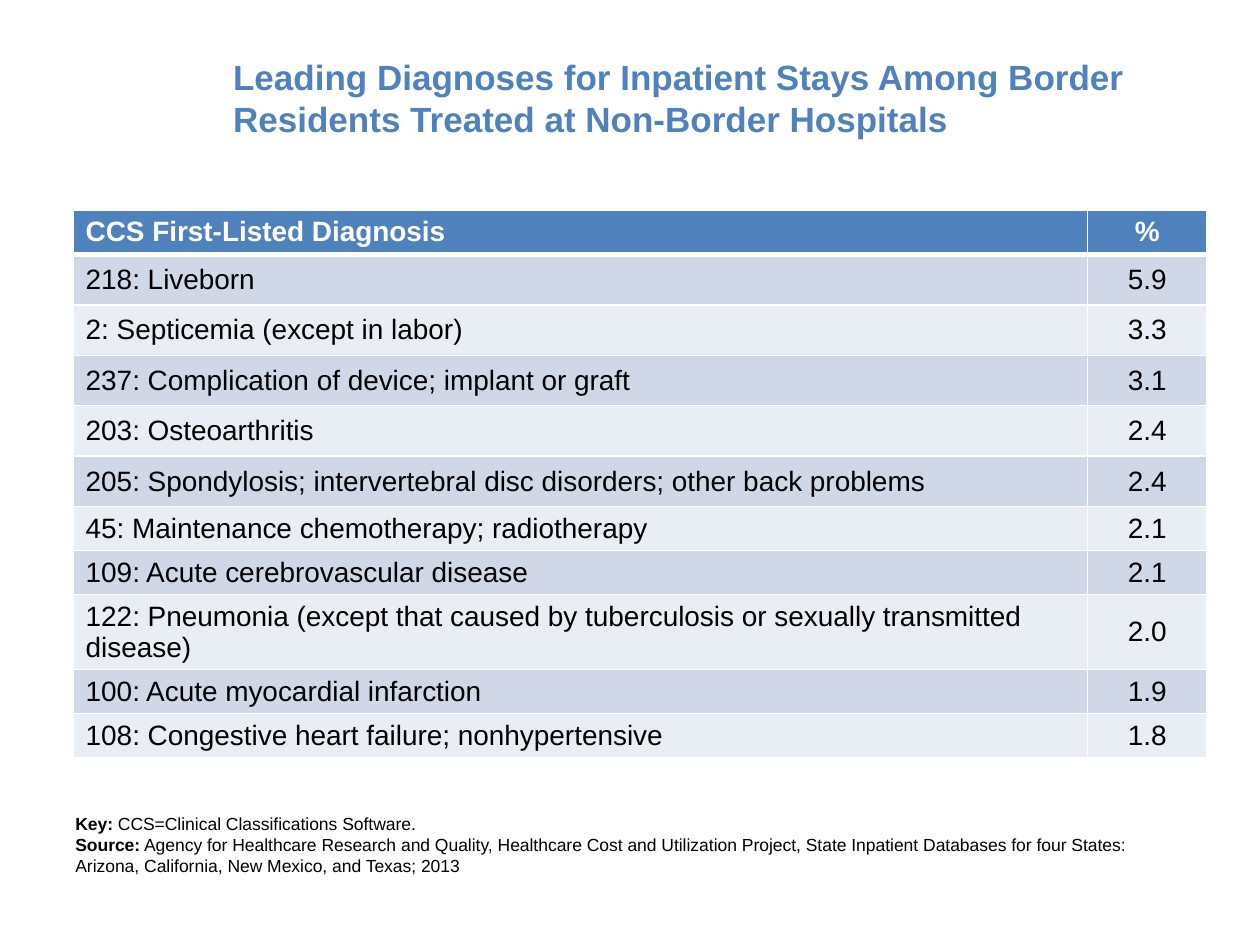
import pptx
import pptx.util
import pptx.dml.color
import pptx.enum.text
import pptx.oxml
import pptx.oxml.ns
from dataclasses import dataclass

Inches = pptx.util.Inches
RGB = pptx.dml.color.RGBColor.from_string
ALIGN = pptx.enum.text.PP_ALIGN
ANCHOR = pptx.enum.text.MSO_ANCHOR


@dataclass
class Theme:
    font: str = "Arial"
    accent: str = "4F81BD"
    white: str = "FFFFFF"
    black: str = "000000"
    bands: tuple = ("D0D8E8", "E9EDF4")
    title: int = 20
    body: int = 16
    note: int = 10


theme = Theme()


def add_run(p, text, size, color, bold=False):
    r = p.add_run()
    r.text = text
    r.font.name = theme.font
    r.font.size = pptx.util.Pt(size)
    r.font.bold = bold
    r.font.color.rgb = RGB(color)


def add_borders(cell, widths):
    tcPr = cell._tc.get_or_add_tcPr()
    for side, width in widths.items():
        tcPr.append(pptx.oxml.parse_xml(
            f'<a:ln{side} {pptx.oxml.ns.nsdecls("a")} w="{pptx.util.Pt(width)}">'
            f'<a:solidFill><a:srgbClr val="{theme.white}"/></a:solidFill></a:ln{side}>'))


prs = pptx.Presentation()
prs.slide_width, prs.slide_height = Inches(10), Inches(7.5)
s = prs.slides.add_slide(prs.slide_layouts[5])

title = s.shapes.title
title.left, title.top = Inches(1.75), Inches(0.3)
title.width, title.height = Inches(7.75), Inches(0.95)
tf = title.text_frame
tf.word_wrap = True
tf.vertical_anchor = ANCHOR.MIDDLE
p = tf.paragraphs[0]
p.alignment = ALIGN.LEFT
add_run(p, "Leading Diagnoses for Inpatient Stays Among Border Residents Treated at Non-Border Hospitals",
        theme.title, theme.accent, True)

rows = [
    ("CCS First-Listed Diagnosis", "%", 0.35),
    ("218: Liveborn", "5.9", 0.4),
    ("2: Septicemia (except in labor)", "3.3", 0.4),
    ("237: Complication of device; implant or graft", "3.1", 0.4),
    ("203: Osteoarthritis", "2.4", 0.4),
    ("205: Spondylosis; intervertebral disc disorders; other back problems", "2.4", 0.4),
    ("45: Maintenance chemotherapy; radiotherapy", "2.1", 0.35),
    ("109: Acute cerebrovascular disease", "2.1", 0.35),
    ("122: Pneumonia (except that caused by tuberculosis or sexually transmitted disease)", "2.0", 0.59),
    ("100: Acute myocardial infarction", "1.9", 0.35),
    ("108: Congestive heart failure; nonhypertensive", "1.8", 0.35),
]
total = sum(height for _, _, height in rows)
table = s.shapes.add_table(len(rows), 2, Inches(0.58), Inches(1.67), Inches(9), Inches(total)).table
table.columns[0].width, table.columns[1].width = Inches(8.05), Inches(0.95)

for i, (diagnosis, percent, height) in enumerate(rows):
    table.rows[i].height = Inches(height)
    header = i == 0
    for j, text in enumerate((diagnosis, percent)):
        cell = table.cell(i, j)
        add_borders(cell, {"L": 1, "R": 1, "T": 3 if i == 1 else 1, "B": 3 if header else 1})
        cell.fill.solid()
        cell.fill.fore_color.rgb = RGB(theme.accent if header else theme.bands[(i - 1) % 2])
        cell.vertical_anchor = ANCHOR.TOP if header else ANCHOR.MIDDLE
        if j == 1 and not header:
            cell.margin_left = cell.margin_right = cell.margin_top = cell.margin_bottom = 0
        p = cell.text_frame.paragraphs[0]
        p.alignment = ALIGN.CENTER if j == 1 else ALIGN.LEFT
        add_run(p, text, theme.body, theme.white if header else theme.black, header)

notes = [
    ("Key: ", "CCS=Clinical Classifications Software."),
    ("Source:", " Agency for Healthcare Research and Quality, Healthcare Cost and Utilization Project, "
     "State Inpatient Databases for four States: Arizona, California, New Mexico, and Texas; 2013"),
]
tf = s.shapes.add_textbox(Inches(0.5), Inches(6.4), Inches(9), Inches(0.62)).text_frame
tf.word_wrap = True
tf.auto_size = pptx.enum.text.MSO_AUTO_SIZE.SHAPE_TO_FIT_TEXT
for i, (label, text) in enumerate(notes):
    p = tf.add_paragraph() if i else tf.paragraphs[0]
    add_run(p, label, theme.note, theme.black, True)
    add_run(p, text, theme.note, theme.black)

prs.save("out.pptx")
